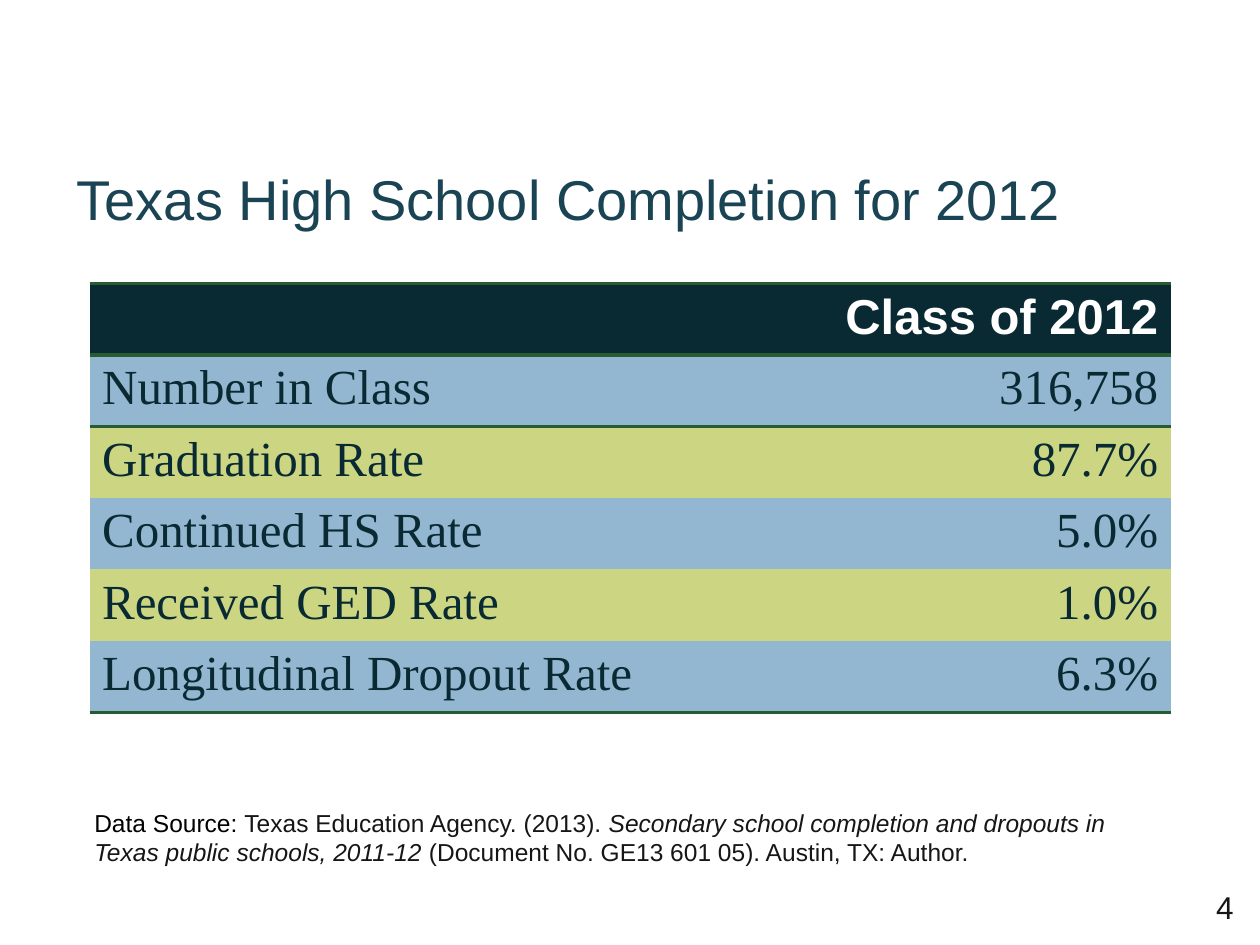
import pptx
import pptx.util
import pptx.dml.color
import pptx.enum.text
import pptx.oxml

Pt = pptx.util.Pt
RGB = pptx.dml.color.RGBColor
ALIGN = pptx.enum.text.PP_ALIGN
ANCHOR = pptx.enum.text.MSO_ANCHOR

TEAL = RGB(0x1A, 0x44, 0x54)
NAVY = RGB(0x0A, 0x2A, 0x33)
GREEN = RGB(0x27, 0x5C, 0x32)
BLUE = RGB(0x93, 0xB7, 0xD0)
LIME = RGB(0xCB, 0xD5, 0x82)
INK = RGB(0x16, 0x16, 0x16)
BLACK = RGB(0, 0, 0)
WHITE = RGB(0xFF, 0xFF, 0xFF)

PLAIN = "{2D5ABB26-0587-4C30-8999-92F81FD0307C}"
HEAD = {"size": Pt(28), "name": "Arial", "bold": True}
BODY = {"size": Pt(28), "name": "Times New Roman", "bold": False}
NOTE = {"size": Pt(14), "name": "Arial"}
ROWS = [
    ("", "Class of 2012"),
    ("Number in Class", "316,758"),
    ("Graduation Rate", "87.7%"),
    ("Continued HS Rate", "5.0%"),
    ("Received GED Rate", "1.0%"),
    ("Longitudinal Dropout Rate", "6.3%"),
]
SOURCE = [
    ("Data Source: ", BLACK, False),
    ("Texas Education Agency. (2013). ", INK, False),
    ("Secondary school completion and dropouts in Texas public schools, 2011-12 ",
     INK, True),
    ("(Document No. GE13 601 05). Austin, TX: Author.", INK, False),
]


def style(font, form, color):
    """Apply format values and a colour to a font."""
    for key, value in form.items():
        setattr(font, key, value)
    font.color.rgb = color


def put(para, text, form, color):
    """Add a styled run to a paragraph."""
    run = para.add_run()
    run.text = text
    style(run.font, form, color)


def head(slide, text):
    """Place and format the title."""
    title = slide.shapes.title
    spot = {"left": Pt(36.7), "top": Pt(80.6), "width": Pt(612), "height": Pt(64.8)}
    for key, value in spot.items():
        setattr(title, key, value)
    frame = title.text_frame
    frame.vertical_anchor = ANCHOR.MIDDLE
    para = frame.paragraphs[0]
    para.alignment = ALIGN.LEFT
    put(para, text, {"size": Pt(32), "name": "Arial"}, TEAL)


def box(slide, left, top, width, height):
    """Add a wrapping text box and return its paragraph."""
    frame = slide.shapes.add_textbox(Pt(left), Pt(top), Pt(width), Pt(height)).text_frame
    frame.word_wrap = True
    return frame.paragraphs[0]


def rule(cell, sides):
    """Draw green borders on the given sides of a cell."""
    props = cell._tc.get_or_add_tcPr()
    for spot, side in enumerate(sides):
        line = pptx.oxml.parse_xml(
            '<a:ln%s xmlns:a="http://schemas.openxmlformats.org/drawingml/2006/main"'
            ' w="%d"><a:solidFill><a:srgbClr val="%s"/></a:solidFill></a:ln%s>'
            % (side, Pt(2), GREEN, side))
        props.insert(spot, line)


def grid(slide):
    """Build the completion table."""
    table = slide.shapes.add_table(
        len(ROWS), 2, Pt(51.2), Pt(162), Pt(617.8), Pt(244.8)).table
    table._tbl.tblPr.find("{*}tableStyleId").text = PLAIN
    for col, width in zip(table.columns, (382.4, 235.4)):
        col.width = Pt(width)
    last = len(ROWS) - 1
    for i, row in enumerate(ROWS):
        fill = NAVY if i == 0 else (LIME, BLUE)[i % 2]
        form, color = (HEAD, WHITE) if i == 0 else (BODY, NAVY)
        sides = {0: "TB", 1: "T", last: "B"}.get(i, "")
        for j, text in enumerate(row):
            cell = table.cell(i, j)
            cell.fill.solid()
            cell.fill.fore_color.rgb = fill
            rule(cell, sides)
            para = cell.text_frame.paragraphs[0]
            para.alignment = (ALIGN.LEFT, ALIGN.RIGHT)[j]
            if text:
                put(para, text, form, color)


def main():
    """Build and save the slide."""
    deck = pptx.Presentation()
    deck.slide_width, deck.slide_height = Pt(720), Pt(540)
    slide = deck.slides.add_slide(deck.slide_layouts[5])
    head(slide, "Texas High School Completion for 2012")
    page = box(slide, 671, 504, 41, 28.8)
    page.alignment = ALIGN.RIGHT
    put(page, "4", {"size": Pt(18), "name": "Arial"}, INK)
    note = box(slide, 46.8, 458, 616.3, 41)
    for text, color, slant in SOURCE:
        put(note, text, {**NOTE, "italic": slant}, color)
    grid(slide)
    deck.save("out.pptx")


if __name__ == "__main__":
    main()
